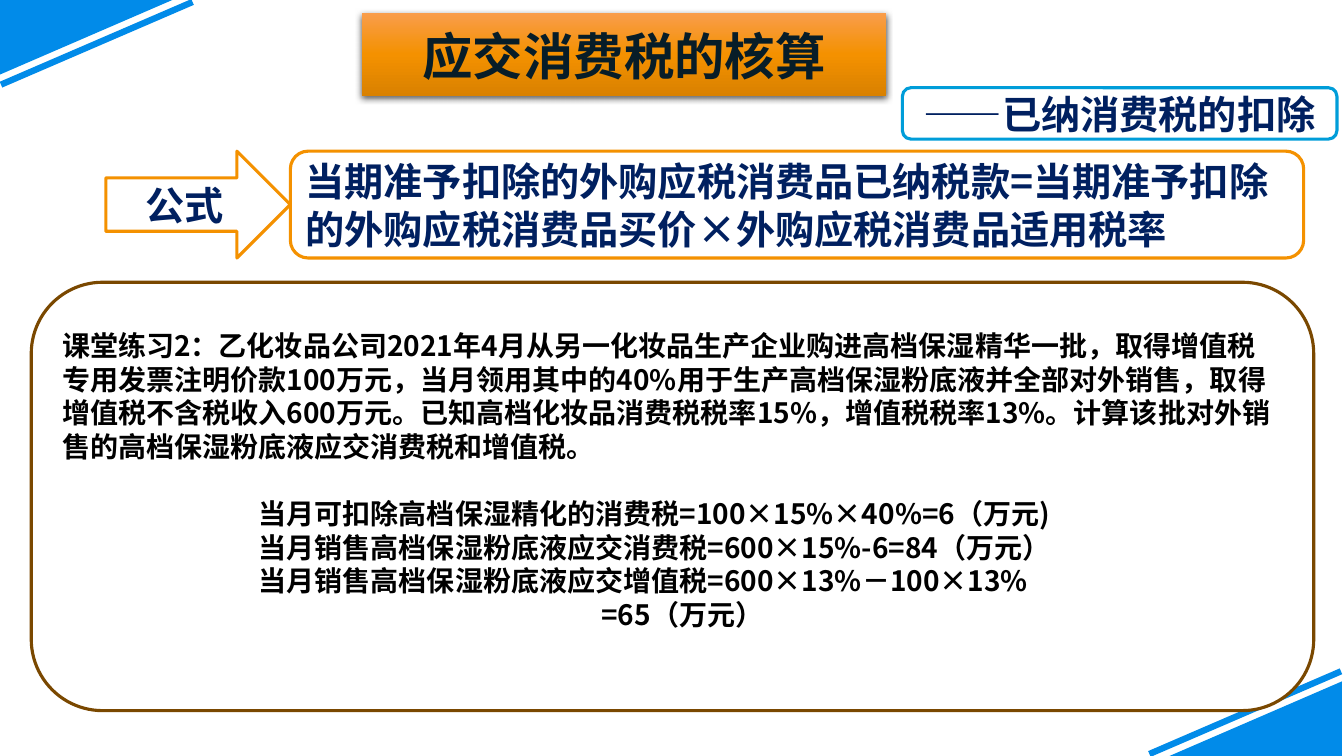
from pptx import Presentation
from pptx.dml.color import RGBColor
from pptx.enum.shapes import MSO_CONNECTOR, MSO_SHAPE
from pptx.enum.text import MSO_ANCHOR, MSO_AUTO_SIZE, PP_ALIGN
from pptx.oxml import parse_xml
from pptx.oxml.ns import nsdecls
from pptx.util import Inches, Pt

WIDTH, HEIGHT = 13.33, 7.5
FONT = "Noto Sans CJK SC"
NAVY, ORANGE, BROWN, CYAN, BLUE = "002060", "F49100", "7A4800", "009DD9", "018BE9"

TITLE = "应交消费税的核算"
SUBTITLE = "——已纳消费税的扣除"
LABEL = "公式"
FORMULA = "当期准予扣除的外购应税消费品已纳税款=当期准予扣除的外购应税消费品买价×外购应税消费品适用税率"
# Text, left indent in inches, space before in points
EXERCISE = [
    ("课堂练习2：乙化妆品公司2021年4月从另一化妆品生产企业购进高档保湿精华一批，"
     "取得增值税专用发票注明价款100万元，当月领用其中的40%用于生产高档保湿粉底液并全部对外销售，"
     "取得增值税不含税收入600万元。已知高档化妆品消费税税率15%，增值税税率13%。"
     "计算该批对外销售的高档保湿粉底液应交消费税和增值税。", 0, 0),
    ("当月可扣除高档保湿精化的消费税=100×15%×40%=6（万元)", 1.95, 24),
    ("当月销售高档保湿粉底液应交消费税=600×15%-6=84（万元）", 1.95, 0),
    ("当月销售高档保湿粉底液应交增值税=600×13%－100×13%", 1.95, 0),
    ("=65（万元）", 5.35, 0),
]
TITLE_STOPS = [(0, "F99D4B"), (50, ORANGE), (100, "D98100")]
CORNER = [(0, 0.74), (0, 0), (1.71, 0)]
STRIPE = [(0.01, 0.84), (1.91, 0.02)]


def color(value):
    return RGBColor.from_string(value)


def write(shape, lines, size, ink=NAVY, align=PP_ALIGN.CENTER, pitch=None, bottom=0.05):
    """Fill a shape with (text, indent, space before) lines."""
    frame = shape.text_frame
    frame.word_wrap = True
    frame.auto_size = MSO_AUTO_SIZE.NONE
    frame.vertical_anchor = MSO_ANCHOR.MIDDLE
    frame.margin_bottom = Inches(bottom)
    for index, (text, indent, before) in enumerate(lines):
        paragraph = frame.add_paragraph() if index else frame.paragraphs[0]
        paragraph.alignment = align
        paragraph.space_before = Pt(before)
        paragraph.line_spacing = Pt(pitch or size * 1.22)
        if indent:
            properties = paragraph._p.get_or_add_pPr()
            properties.set("marL", str(Inches(indent)))
            properties.set("indent", "0")
        run = paragraph.add_run()
        run.text = text
        run.font.size, run.font.bold, run.font.name = Pt(size), True, FONT
        run.font.color.rgb = color(ink)
        run._r.get_or_add_rPr().append(
            parse_xml(f'<a:ea {nsdecls("a")} typeface="{FONT}"/>'))


def add_box(slide, kind, left, top, width, height, line):
    shape = slide.shapes.add_shape(kind, *map(Inches, (left, top, width, height)))
    shape.shadow.inherit = False
    shape.fill.solid()
    shape.fill.fore_color.rgb = color("FFFFFF")
    shape.line.color.rgb = color(line)
    shape.line.width = Pt(2.25)
    return shape


def add_corner(slide, turned):
    """Draw a corner triangle and stripe; turned puts them bottom right."""
    def place(points):
        return [(Inches(WIDTH - 0.02 - x), Inches(HEIGHT - y)) if turned
                else (Inches(x), Inches(y)) for x, y in points]

    start, *others = place(CORNER)
    builder = slide.shapes.build_freeform(*start)
    builder.add_line_segments(others, close=True)
    triangle = builder.convert_to_shape()
    triangle.shadow.inherit = False
    triangle.fill.solid()
    triangle.fill.fore_color.rgb = color(BLUE)
    triangle.line.fill.background()
    begin, end = place(STRIPE)
    stripe = slide.shapes.add_connector(MSO_CONNECTOR.STRAIGHT, *begin, *end)
    stripe.line.color.rgb = color(BLUE)
    stripe.line.width = Pt(4.5)
    stripe._element.spPr.append(parse_xml(f'<a:effectLst {nsdecls("a")}/>'))


def format_title(title):
    title.left, title.top, title.width, title.height = map(Inches, (3.59, 0.13, 5.2, 0.82))
    stops = "".join(f'<a:gs pos="{share * 1000}"><a:srgbClr val="{value}"/></a:gs>'
                    for share, value in TITLE_STOPS)
    for xml in (
        f'<a:prstGeom {nsdecls("a")} prst="roundRect"><a:avLst/></a:prstGeom>',
        f'<a:gradFill {nsdecls("a")}><a:gsLst>{stops}</a:gsLst><a:lin ang="5400000"/></a:gradFill>',
        f'<a:effectLst {nsdecls("a")}><a:outerShdw blurRad="{Pt(4.5)}" dist="{Pt(1.5)}" dir="5400000">'
        '<a:srgbClr val="000000"><a:alpha val="63000"/></a:srgbClr></a:outerShdw></a:effectLst>',
    ):
        title._element.spPr.append(parse_xml(xml))
    write(title, [(TITLE, 0, 0)], 36, ink="071D28")


def main():
    presentation = Presentation()
    presentation.slide_width, presentation.slide_height = Inches(WIDTH), Inches(HEIGHT)
    slide = presentation.slides.add_slide(presentation.slide_layouts[5])
    format_title(slide.shapes.title)
    for turned in (True, False):
        add_corner(slide, turned)

    arrow = add_box(slide, MSO_SHAPE.RIGHT_ARROW, 1.05, 1.5, 1.83, 1.06, ORANGE)
    write(arrow, [(LABEL, 0, 0)], 28)
    formula = add_box(slide, MSO_SHAPE.ROUNDED_RECTANGLE, 2.88, 1.5, 10.05, 1.06, ORANGE)
    write(formula, [(FORMULA, 0, 0)], 28, align=PP_ALIGN.LEFT)
    exercise = add_box(slide, MSO_SHAPE.ROUNDED_RECTANGLE, 0.31, 2.8, 12.72, 4.25, BROWN)
    write(exercise, EXERCISE, 20, ink="000000", align=PP_ALIGN.LEFT, pitch=24, bottom=0.38)
    subtitle = add_box(slide, MSO_SHAPE.ROUNDED_RECTANGLE, 8.95, 0.87, 4.31, 0.51, CYAN)
    write(subtitle, [(SUBTITLE, 0, 0)], 28)

    presentation.save("out.pptx")


if __name__ == "__main__":
    main()
